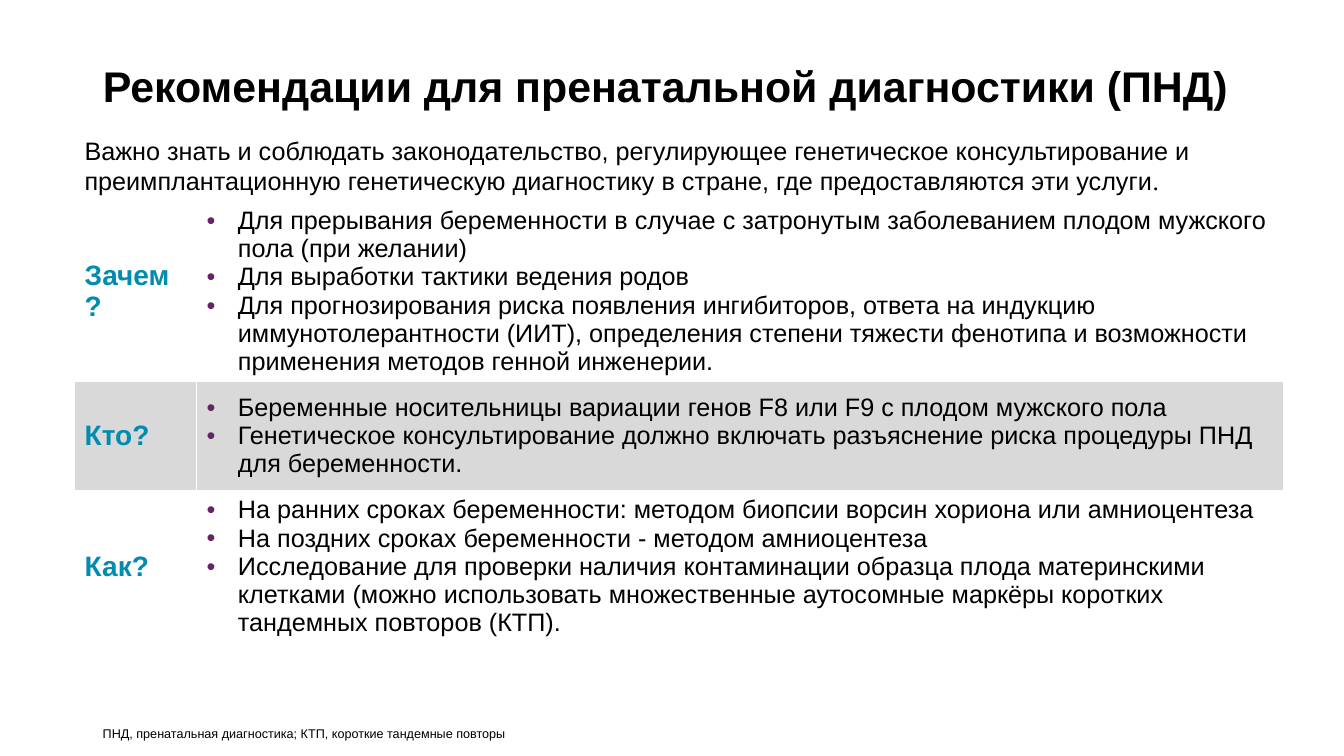
from lxml import etree
from pptx import Presentation
from pptx.dml.color import RGBColor
from pptx.enum import text
from pptx.oxml import ns
from pptx.util import Inches, Pt

FONT = "Arial"
COLORS = {"ink": "000000", "question": "008BB0", "bullet": "642566",
          "plain": "FFFFFF", "band": "D9D9D9"}

TITLE = "Рекомендации для пренатальной диагностики (ПНД)"
INTRO = ("Важно знать и соблюдать законодательство, регулирующее генетическое "
         "консультирование и преимплантационную генетическую диагностику в стране, "
         "где предоставляются эти услуги")
FOOTNOTE = "ПНД, пренатальная диагностика; КТП, короткие тандемные повторы"
ROWS = [
    ("Зачем?", 1.75, [
        "Для прерывания беременности в случае c затронутым заболеванием плодом "
        "мужского пола (при желании)",
        "Для выработки тактики ведения родов",
        "Для прогнозирования риска появления ингибиторов, ответа на индукцию "
        "иммунотолерантности (ИИТ), определения степени тяжести фенотипа и "
        "возможности применения методов генной инженерии.",
    ]),
    ("Кто?", 1.09, [
        "Беременные носительницы вариации генов F8 или F9 с плодом мужского пола",
        "Генетическое консультирование должно включать разъяснение риска процедуры "
        "ПНД для беременности.",
    ]),
    ("Как?", 1.42, [
        "На ранних сроках беременности: методом биопсии ворсин хориона или амниоцентеза",
        "На поздних сроках беременности - методом амниоцентеза",
        "Исследование для проверки наличия контаминации образца плода материнскими "
        "клетками (можно использовать множественные аутосомные маркёры коротких "
        "тандемных повторов (КТП).",
    ]),
]
COLUMN_WIDTHS = [1.21, 10.78]
LEFT, TABLE_TOP = 0.74, 2


def color(name):
    return RGBColor.from_string(COLORS[name])


def add_span(para, words, size, ink="ink", bold=False, font=FONT):
    span = para.add_run()
    span.text = words
    span.font.name = font
    span.font.size = Pt(size)
    span.font.bold = bold
    span.font.color.rgb = color(ink)


def add_bullet(para):
    props = para._p.get_or_add_pPr()
    props.set("marL", str(Inches(0.31)))
    props.set("indent", str(-Inches(0.31)))
    bullet_color = etree.SubElement(props, ns.qn("a:buClr"))
    etree.SubElement(bullet_color, ns.qn("a:srgbClr"), val=COLORS["bullet"])
    etree.SubElement(props, ns.qn("a:buFont"), typeface=FONT)
    etree.SubElement(props, ns.qn("a:buChar"), char="•")


def add_box(page, left, top, width, height):
    box = page.shapes.add_textbox(*map(Inches, (left, top, width, height)))
    box.text_frame.word_wrap = True
    return box.text_frame


def add_title(page):
    title = page.shapes.title
    title.left, title.top, title.width, title.height = map(
        Inches, (0.92, 0.25, 11.5, 1.19))
    frame = title.text_frame
    frame.auto_size = text.MSO_AUTO_SIZE.NONE
    frame.vertical_anchor = text.MSO_ANCHOR.MIDDLE
    para = frame.paragraphs[0]
    para.alignment = text.PP_ALIGN.LEFT
    add_span(para, TITLE, 30.6, bold=True)


def add_questions(page):
    heights = [height for _, height, _ in ROWS]
    table = page.shapes.add_table(
        len(ROWS), len(COLUMN_WIDTHS), Inches(LEFT), Inches(TABLE_TOP),
        Inches(sum(COLUMN_WIDTHS)), Inches(sum(heights))).table
    table.first_row = table.horz_banding = False
    for column, width in zip(table.columns, COLUMN_WIDTHS):
        column.width = Inches(width)
    for index, (question, height, answers) in enumerate(ROWS):
        table.rows[index].height = Inches(height)
        cells = table.rows[index].cells
        for cell in cells:
            cell.vertical_anchor = text.MSO_ANCHOR.MIDDLE
            cell.fill.solid()
            cell.fill.fore_color.rgb = color("band" if index % 2 else "plain")
        add_span(cells[0].text_frame.paragraphs[0], question, 20, "question", True)
        frame = cells[1].text_frame
        for number, answer in enumerate(answers):
            para = frame.add_paragraph() if number else frame.paragraphs[0]
            add_bullet(para)
            add_span(para, answer, 18)


def main():
    deck = Presentation()
    deck.slide_width, deck.slide_height = Inches(13.33), Inches(7.5)
    page = deck.slides.add_slide(deck.slide_layouts[5])
    add_questions(page)
    add_title(page)

    footnote = add_box(page, 0.92, 6.95, 10.85, 0.4)
    footnote.vertical_anchor = text.MSO_ANCHOR.BOTTOM
    footnote.margin_bottom = 0
    add_span(footnote.paragraphs[0], FOOTNOTE, 9)

    intro = add_box(page, LEFT, 1.29, 11.2, 0.71)
    add_span(intro.paragraphs[0], INTRO, 18)
    add_span(intro.paragraphs[0], ".", 18, font="Times New Roman")
    deck.save("out.pptx")


if __name__ == "__main__":
    main()
